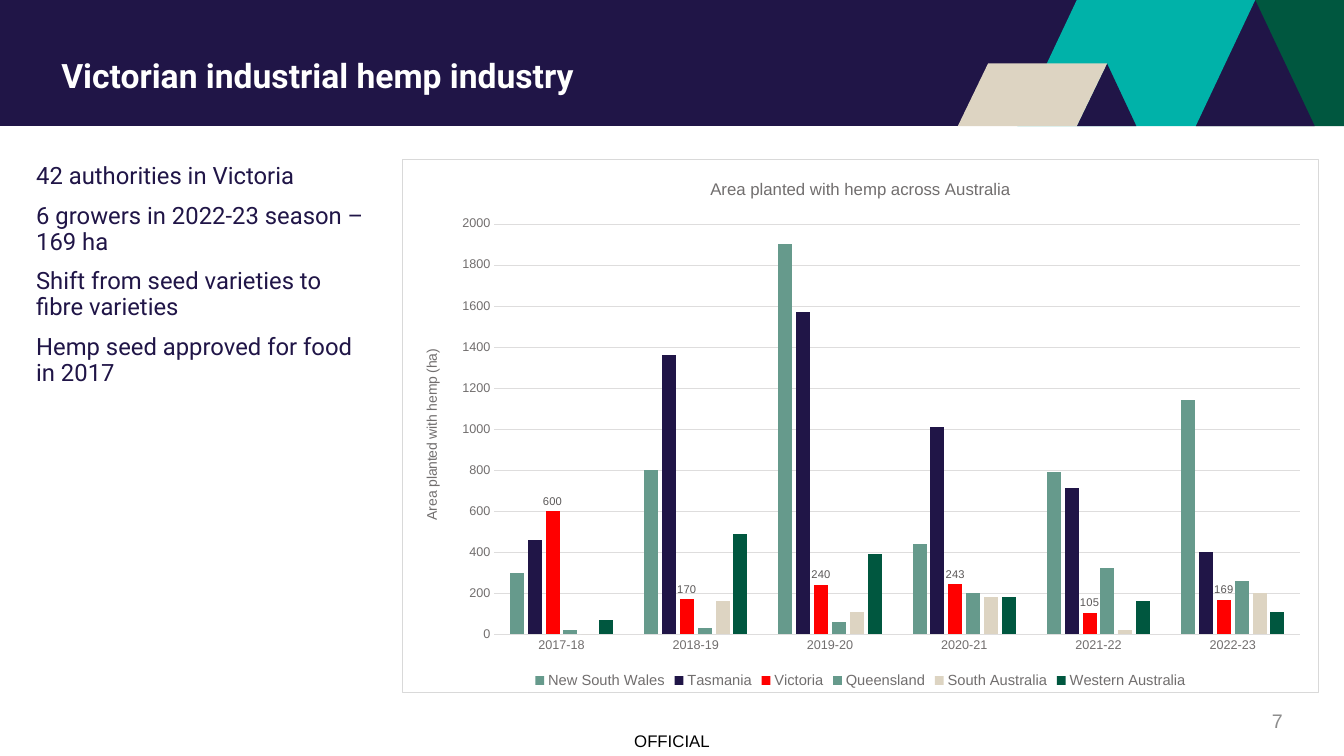
from dataclasses import dataclass

from lxml import etree
from pptx import Presentation
from pptx import util as u
from pptx.chart.data import CategoryChartData
from pptx.dml.color import RGBColor
from pptx.enum import chart as ch
from pptx.enum import text
from pptx.oxml import parse_xml
from pptx.oxml.ns import nsdecls

PX = 9144  # EMU per px, 100 px to the inch

NAVY = RGBColor(0x20, 0x15, 0x47)
GREEN = RGBColor(0x00, 0x57, 0x3F)
TEAL = RGBColor(0x00, 0xB2, 0xA9)
SAND = RGBColor(0xDD, 0xD4, 0xC2)
SAGE = RGBColor(0x66, 0x9A, 0x8C)
RED = RGBColor(0xFF, 0x00, 0x00)
WHITE = RGBColor(0xFF, 0xFF, 0xFF)
BLACK = RGBColor(0x00, 0x00, 0x00)
PAGE_GREY = RGBColor(0x8D, 0x8D, 0x8D)
TEXT_GREY = RGBColor(0x71, 0x6E, 0x6E)
LABEL_GREY = RGBColor(0x5B, 0x58, 0x58)
RULE_GREY = RGBColor(0xDE, 0xDD, 0xDD)
FRAME_GREY = RGBColor(0xD9, 0xD9, 0xD9)


@dataclass
class Band:
    """A flat outline in the header."""
    color: RGBColor
    points: list[tuple[int, int]]


@dataclass
class TextBlock:
    box: tuple[int, int, int, int]
    lines: list[str]
    size: int
    color: RGBColor
    font: str = "Arial"
    bold: bool = False
    align: text.PP_ALIGN = text.PP_ALIGN.LEFT
    anchor: text.MSO_ANCHOR = text.MSO_ANCHOR.MIDDLE
    spacing: float = 1.0
    before: int = 0
    inset: bool = True


@dataclass
class Region:
    name: str
    color: RGBColor
    hectares: list[int]
    labelled: bool = False


BANDS = [
    Band(NAVY, [(0, 0), (1333, 0), (1333, 125), (0, 125)]),
    Band(GREEN, [(1245, 0), (1333, 0), (1333, 125), (1186, 125)]),
    Band(NAVY, [(1245, 0), (1304, 125), (1186, 125)]),
    Band(TEAL, [(1068, 0), (1245, 0), (1186, 125), (1009, 125)]),
    Band(NAVY, [(1098, 63), (1127, 125), (1068, 125)]),
    Band(SAND, [(980, 63), (1098, 63), (1068, 125), (950, 125)]),
]

TEXTS = [
    TextBlock((612, 719, 109, 31), ["OFFICIAL"], 12, BLACK,
              align=text.PP_ALIGN.CENTER, inset=False),
    TextBlock((1041, 695, 241, 40), ["7"], 14, PAGE_GREY, align=text.PP_ALIGN.RIGHT),
    TextBlock((51, 55, 890, 44), ["Victorian industrial hemp industry"], 24, WHITE,
              font="Roboto", bold=True, spacing=0.9),
    TextBlock((26, 158, 355, 508),
              ["42 authorities in Victoria",
               "6 growers in 2022-23 season – 169 ha",
               "Shift from seed varieties to fibre varieties",
               "Hemp seed approved for food in 2017"],
              17, NAVY, font="Roboto", anchor=text.MSO_ANCHOR.TOP, spacing=0.9, before=10),
]

SEASONS = ["2017-18", "2018-19", "2019-20", "2020-21", "2021-22", "2022-23"]
REGIONS = [
    Region("New South Wales", SAGE, [300, 800, 1900, 440, 790, 1140]),
    Region("Tasmania", NAVY, [460, 1360, 1570, 1010, 710, 400]),
    Region("Victoria", RED, [600, 170, 240, 243, 105, 169], labelled=True),
    Region("Queensland", SAGE, [20, 30, 60, 200, 320, 260]),
    Region("South Australia", SAND, [0, 160, 110, 180, 20, 200]),
    Region("Western Australia", GREEN, [70, 490, 390, 180, 160, 110]),
]


def draw_band(page, band: Band) -> None:
    start, *rest = band.points
    builder = page.shapes.build_freeform(*start, scale=PX)
    builder.add_line_segments(rest, close=True)
    shape = builder.convert_to_shape()
    shape.shadow.inherit = False
    shape.fill.solid()
    shape.fill.fore_color.rgb = band.color
    shape.line.fill.background()


def set_font(font, size: float, color: RGBColor, name: str = "Arial", bold: bool = False) -> None:
    font.name, font.size, font.bold = name, u.Pt(size), bold
    font.color.rgb = color


def draw_text(page, block: TextBlock) -> None:
    frame = page.shapes.add_textbox(*(n * PX for n in block.box)).text_frame
    frame.word_wrap = True
    frame.vertical_anchor = block.anchor
    if not block.inset:
        frame.margin_left = frame.margin_right = frame.margin_top = frame.margin_bottom = 0
    for i, line in enumerate(block.lines):
        para = frame.add_paragraph() if i else frame.paragraphs[0]
        para.alignment = block.align
        para.line_spacing = block.spacing
        para.space_before = u.Pt(block.before)
        span = para.add_run()
        span.text = line
        set_font(span.font, block.size, block.color, block.font, block.bold)


def set_title(owner, words: str, size: float) -> None:
    span = owner.text_frame.paragraphs[0].add_run()
    span.text = words
    set_font(span.font, size, TEXT_GREY)


def style_axis(axis) -> None:
    axis.major_tick_mark = axis.minor_tick_mark = ch.XL_TICK_MARK.NONE
    set_font(axis.tick_labels.font, 9, TEXT_GREY)


def frame_chart(chart) -> None:
    """Fill and outline the chart area, and fix the inner plot area."""
    area = parse_xml(
        f'<c:spPr {nsdecls("c", "a")}><a:solidFill><a:srgbClr val="{WHITE}"/></a:solidFill>'
        f'<a:ln w="{u.Pt(0.75)}"><a:solidFill><a:srgbClr val="{FRAME_GREY}"/></a:solidFill></a:ln>'
        '</c:spPr>')
    space = chart.element
    body = space.find("c:chart", space.nsmap)
    body.addnext(area)
    plot_area = body.find("c:plotArea", space.nsmap)
    for old in plot_area.findall("c:layout", space.nsmap):
        plot_area.remove(old)
    layout = parse_xml(f'<c:layout {nsdecls("c")}><c:manualLayout/></c:layout>')
    settings = dict(layoutTarget="inner", xMode="edge", yMode="edge",
                    x="0.1", y="0.12", w="0.88", h="0.77")
    for tag, value in settings.items():
        etree.SubElement(layout[0], f'{{{space.nsmap["c"]}}}{tag}', val=value)
    plot_area.insert(0, layout)


def draw_chart(page) -> None:
    data = CategoryChartData()
    data.categories = SEASONS
    for region in REGIONS:
        data.add_series(region.name, region.hectares)
    box = (n * PX for n in (399, 158, 909, 530))
    chart = page.shapes.add_chart(ch.XL_CHART_TYPE.COLUMN_CLUSTERED, *box, data).chart
    set_font(chart.font, 10, TEXT_GREY)
    set_title(chart.chart_title, "Area planted with hemp across Australia", 12)
    chart.chart_title.include_in_layout = False

    # Legend
    chart.has_legend = True
    chart.legend.position = ch.XL_LEGEND_POSITION.BOTTOM
    chart.legend.include_in_layout = False
    set_font(chart.legend.font, 10.5, TEXT_GREY)

    # Axes
    seasons, hectares = chart.category_axis, chart.value_axis
    style_axis(seasons)
    style_axis(hectares)
    seasons.format.line.color.rgb = RULE_GREY
    seasons.format.line.width = u.Pt(0.75)
    hectares.format.line.fill.background()
    hectares.minimum_scale, hectares.maximum_scale, hectares.major_unit = 0, 2000, 200
    hectares.major_gridlines.format.line.color.rgb = RULE_GREY
    hectares.major_gridlines.format.line.width = u.Pt(0.25)
    set_title(hectares.axis_title, "Area planted with hemp (ha)", 10)

    # Columns
    plot = chart.plots[0]
    plot.gap_width, plot.overlap, plot.vary_by_categories = 219, -27, False
    for region, series in zip(REGIONS, plot.series):
        series.format.fill.solid()
        series.format.fill.fore_color.rgb = region.color
        if region.labelled:
            labels = series.data_labels
            labels.show_value = True
            labels.position = ch.XL_LABEL_POSITION.OUTSIDE_END
            set_font(labels.font, 8, LABEL_GREY)
    frame_chart(chart)


def main() -> None:
    deck = Presentation()
    deck.slide_width, deck.slide_height = 1333 * PX, 750 * PX
    page = deck.slides.add_slide(deck.slide_layouts[6])
    for band in BANDS:
        draw_band(page, band)
    for block in TEXTS:
        draw_text(page, block)
    draw_chart(page)
    deck.save("out.pptx")


if __name__ == "__main__":
    main()
